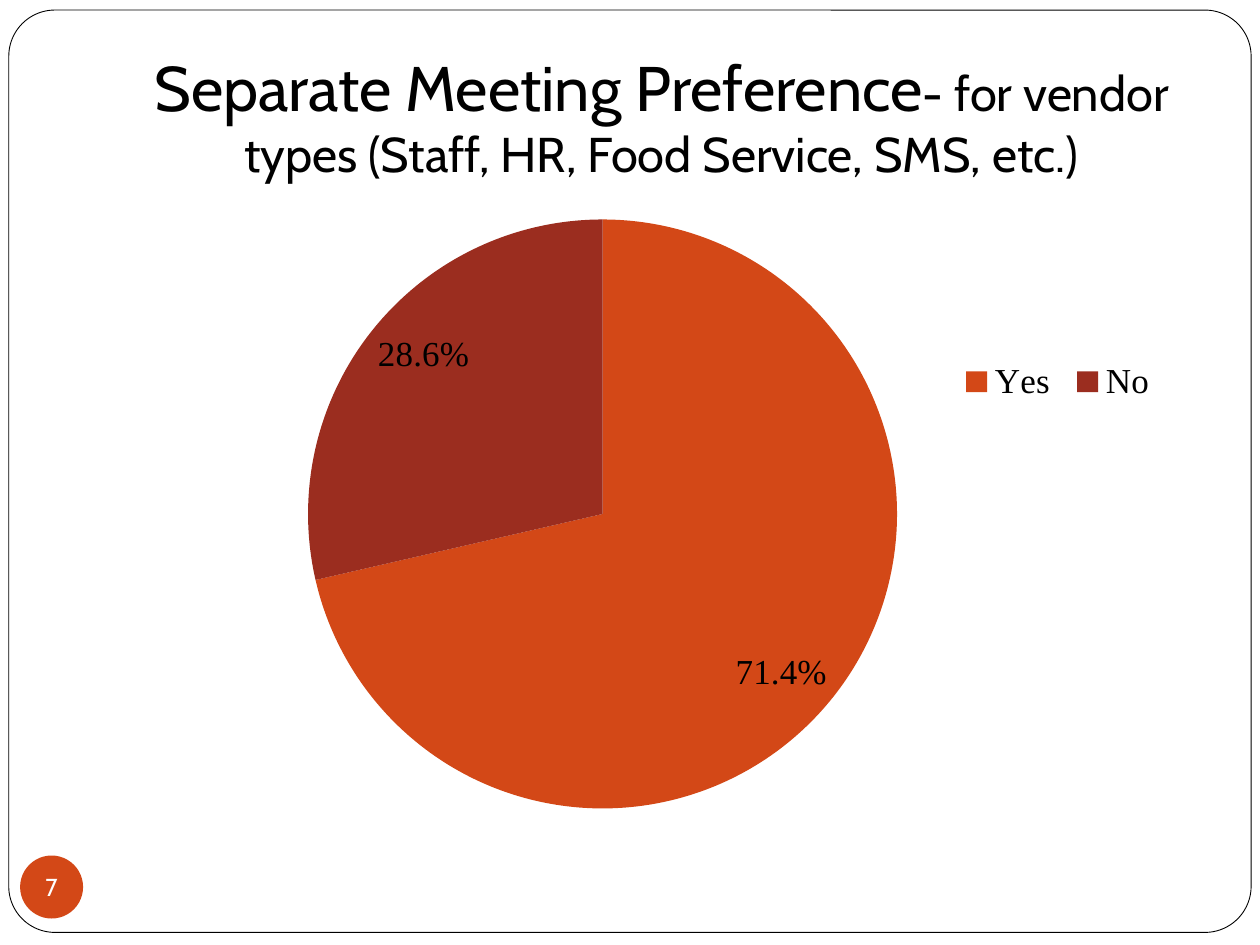
from lxml import etree
from pptx import Presentation
from pptx.chart.data import CategoryChartData
from pptx.dml.color import RGBColor
from pptx.enum.chart import XL_CHART_TYPE, XL_LABEL_POSITION, XL_LEGEND_POSITION
from pptx.enum.shapes import MSO_SHAPE
from pptx.enum.text import MSO_ANCHOR, PP_ALIGN
from pptx.oxml.ns import qn
from pptx.util import Inches, Pt

BLACK = RGBColor(0x00, 0x00, 0x00)
WHITE = RGBColor(0xFF, 0xFF, 0xFF)
ORANGE = RGBColor(0xD3, 0x48, 0x17)
DARK_RED = RGBColor(0x9B, 0x2D, 0x1F)
TEXT_FONT = "Cabin"
CHART_FONT = "Times New Roman"


def add_run(paragraph, text, size, color):
    run = paragraph.add_run()
    run.text = text
    run.font.name = TEXT_FONT
    run.font.size = Pt(size)
    run.font.color.rgb = color


def set_layout(element, successor, x, y, width, height, inner=False):
    """Place a chart part by shares of the chart's width and height."""
    for old_layout in element.findall(qn("c:layout")):
        element.remove(old_layout)
    layout = etree.Element(qn("c:layout"))
    manual = etree.SubElement(layout, qn("c:manualLayout"))
    settings = [("xMode", "edge"), ("yMode", "edge"),
                ("x", x), ("y", y), ("w", width), ("h", height)]
    if inner:
        settings.insert(0, ("layoutTarget", "inner"))
    for name, value in settings:
        etree.SubElement(manual, qn(f"c:{name}")).set("val", str(value))
    element.find(qn(successor)).addprevious(layout)


presentation = Presentation()
presentation.slide_width = Inches(10)
presentation.slide_height = Inches(7.5)
slide = presentation.slides.add_slide(presentation.slide_layouts[6])
content_left, content_width = Inches(1), Inches(8.5)

# Rounded frame
frame = slide.shapes.add_shape(
    MSO_SHAPE.ROUNDED_RECTANGLE, Inches(0.07), Inches(0.08), Inches(9.86), Inches(7.32))
frame.adjustments[0] = 0.05
frame.shadow.inherit = False
frame.fill.solid()
frame.fill.fore_color.rgb = WHITE
frame.line.color.rgb = BLACK
frame.line.width = Pt(0.5)

# Title
title = slide.shapes.add_textbox(content_left, Inches(0.3), content_width, Inches(1.25))
title_frame = title.text_frame
title_frame.word_wrap = True
title_frame.vertical_anchor = MSO_ANCHOR.BOTTOM
title_frame.margin_bottom = Inches(0.1)
title_paragraph = title_frame.paragraphs[0]
title_paragraph.alignment = PP_ALIGN.CENTER
add_run(title_paragraph, "Separate Meeting Preference", 36, BLACK)
add_run(title_paragraph, "- for vendor types (Staff, HR, Food Service, SMS, etc.)", 27.9, BLACK)

# Pie chart
chart_data = CategoryChartData(number_format="0.0%")
chart_data.categories = ["Yes", "No"]
chart_data.add_series("Series 1", [0.714, 0.286])
chart = slide.shapes.add_chart(
    XL_CHART_TYPE.PIE, content_left, Inches(1.58), content_width, Inches(5), chart_data).chart
chart.has_title = False
chart.font.name = CHART_FONT
chart.font.size = Pt(18)
chart.font.color.rgb = BLACK

plot = chart.plots[0]
plot.vary_by_categories = True
for index, color in enumerate([ORANGE, DARK_RED]):
    fill = plot.series[0].points[index].format.fill
    fill.solid()
    fill.fore_color.rgb = color

plot.has_data_labels = True
labels = plot.data_labels
labels.show_value = True
labels.show_percentage = False
labels.number_format = "0.0%"
labels.number_format_is_linked = False
labels.position = XL_LABEL_POSITION.INSIDE_END

chart.has_legend = True
legend = chart.legend
legend.position = XL_LEGEND_POSITION.RIGHT
legend.include_in_layout = False
for font in (labels.font, legend.font):
    font.name = CHART_FONT
    font.size = Pt(20)
    font.color.rgb = BLACK

plot_area = chart.element.find(".//" + qn("c:plotArea"))
set_layout(plot_area, "c:pieChart", 0.17, 0.03, 0.55, 0.94, inner=True)
set_layout(chart.element.find(".//" + qn("c:legend")), "c:overlay", 0.77, 0.24, 0.2, 0.1)

# Slide number badge
badge = slide.shapes.add_shape(
    MSO_SHAPE.OVAL, Inches(0.16), Inches(6.79), Inches(0.5), Inches(0.5))
badge.shadow.inherit = False
badge.fill.solid()
badge.fill.fore_color.rgb = ORANGE
badge.line.fill.background()
badge_frame = badge.text_frame
badge_frame.word_wrap = False
badge_frame.vertical_anchor = MSO_ANCHOR.MIDDLE
badge_frame.margin_left = badge_frame.margin_right = 0
badge_frame.margin_top = badge_frame.margin_bottom = 0
badge_paragraph = badge_frame.paragraphs[0]
badge_paragraph.alignment = PP_ALIGN.CENTER
add_run(badge_paragraph, "7", 14, WHITE)

presentation.save("out.pptx")
